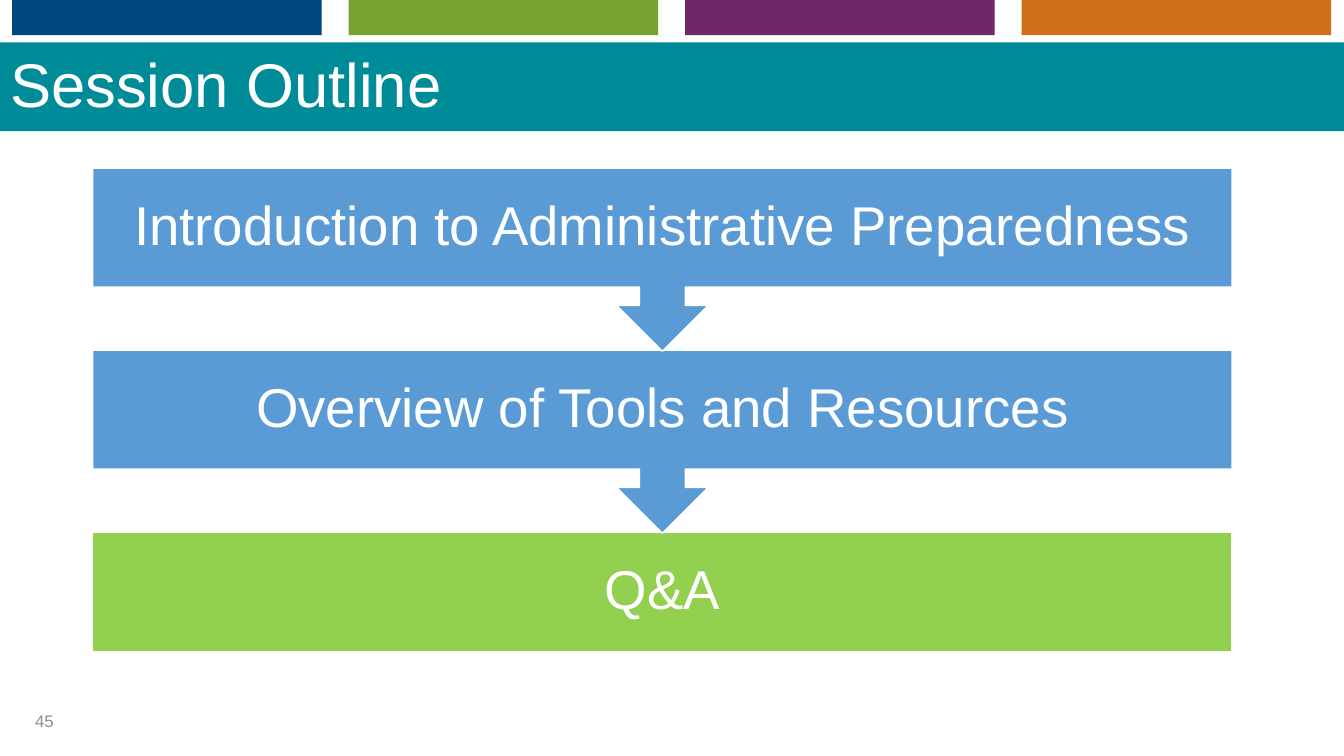
from pptx import Presentation
from pptx.dml.color import RGBColor
from pptx.enum.shapes import MSO_SHAPE
from pptx.enum.text import MSO_ANCHOR, PP_ALIGN
from pptx.util import Inches, Pt

WIDE, HIGH = 13.33, 7.5
WHITE, TEAL, BLUE, LIME, GREY = "FFFFFF", "008B99", "5B9BD5", "92D050", "8C8C8C"
TABS = ["00467F", "78A22F", "6D276A", "D06F1A"]
STEPS = ["Introduction to Administrative Preparedness",
         "Overview of Tools and Resources", "Q&A"]


def color(part, value):
    part.rgb = RGBColor.from_string(value)


def write(shape, text, size, ink=WHITE, align=PP_ALIGN.LEFT, inset=None, line=None):
    frame = shape.text_frame
    frame.word_wrap = True
    frame.vertical_anchor = MSO_ANCHOR.MIDDLE
    if inset is not None:
        frame.margin_left = frame.margin_right = Inches(inset)
        frame.margin_top = frame.margin_bottom = Inches(inset)
    para = frame.paragraphs[0]
    para.alignment = align
    para.line_spacing = line
    run = para.add_run()
    run.text = text
    run.font.name = "Arial"
    run.font.size = Pt(size)
    color(run.font.color, ink)


def block(slide, kind, box, fill, edge=None):
    shape = slide.shapes.add_shape(kind, *map(Inches, box))
    shape.shadow.inherit = False
    shape.fill.solid()
    color(shape.fill.fore_color, fill)
    if edge:
        color(shape.line.color, edge)
        shape.line.width = Pt(1)
    else:
        shape.line.fill.background()
    return shape


def header(slide, text, box):
    """Teal band with a row of colour tabs above it and the title on it."""
    left, top, width, height = box
    band = 0.42
    block(slide, MSO_SHAPE.RECTANGLE, (left, top + band, width, height - band), TEAL)
    pitch = (width + 0.02) / len(TABS)
    for i, fill in enumerate(TABS):
        block(slide, MSO_SHAPE.RECTANGLE,
              (left + 0.12 + i * pitch, top, 3.07, 0.35), fill)
    title = slide.shapes.title
    title.left, title.top = Inches(left), Inches(top + 0.46)
    title.width, title.height = Inches(11.5), Inches(0.81)
    write(title, text, 44, line=0.9)
    # Bring the title in front of the band
    slide.shapes._spTree.append(title._element)


def flow(slide, steps, box):
    """Stacked steps; every step but the last points down to the next."""
    left, top, width, height = box
    bar = 1.19
    pitch = (height - bar) / (len(steps) - 1)
    for i, text in reversed(list(enumerate(steps))):
        last = i == len(steps) - 1
        kind = MSO_SHAPE.RECTANGLE if last else MSO_SHAPE.DOWN_ARROW_CALLOUT
        deep = bar if last else pitch + 0.01
        step = block(slide, kind, (left, top + i * pitch, width, deep),
                     LIME if last else BLUE, WHITE)
        write(step, text, 39, align=PP_ALIGN.CENTER, inset=0.3, line=0.9)


def footer(slide, text, box):
    write(slide.shapes.add_textbox(*map(Inches, box)), text, 12, GREY)


def main():
    deck = Presentation()
    deck.slide_width, deck.slide_height = Inches(WIDE), Inches(HIGH)
    slide = deck.slides.add_slide(deck.slide_layouts[5])
    header(slide, "Session Outline", (0, 0, WIDE, 1.3))
    flow(slide, STEPS, (0.92, 1.67, 11.3, 4.8))
    footer(slide, "45", (0.25, 6.95, 3, 0.4))
    deck.save("out.pptx")


if __name__ == "__main__":
    main()
